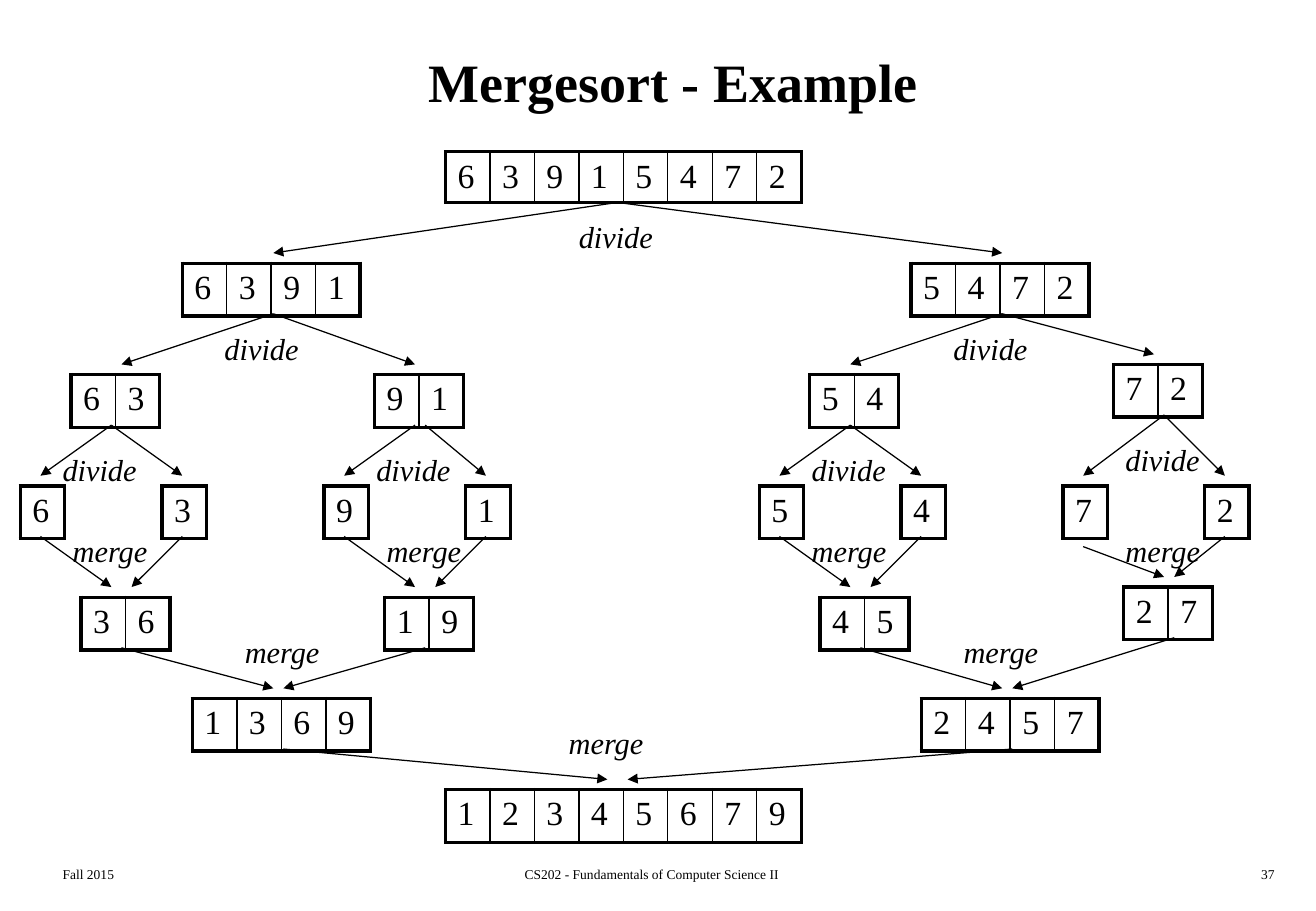
from lxml.etree import SubElement
from pptx import Presentation
from pptx.dml.color import RGBColor
from pptx.enum.shapes import MSO_CONNECTOR
from pptx.enum.text import MSO_ANCHOR, PP_ALIGN
from pptx.oxml.ns import qn
from pptx.util import Cm, Pt

FONT = "Times New Roman"
BLACK = "000000"
CELL_W, CELL_H = Cm(0.93), Cm(1.06)
THICK, THIN = Pt(2.25), Pt(1)


def grid(n):
    """Everything sits on a grid of twelve steps to the inch."""
    return Cm(n * 2.54 / 12)


def color(hex_string):
    return RGBColor.from_string(hex_string)


def write(tf, text, size=20, bold=False, italic=False, align=PP_ALIGN.LEFT):
    p = tf.paragraphs[0]
    p.alignment = align
    r = p.add_run()
    r.text = text
    r.font.name = FONT
    r.font.size = Pt(size)
    r.font.bold = bold
    r.font.italic = italic
    r.font.color.rgb = color(BLACK)


def add_text(slide, text, x, y, w, h, **fmt):
    sp = slide.shapes.add_textbox(grid(x), grid(y), grid(w), grid(h))
    sp.text_frame.word_wrap = True
    write(sp.text_frame, text, **fmt)


def add_label(slide, text, x, y):
    width = {"divide": 12, "merge": 10}[text]
    add_text(slide, text, x, y, width, 4.8, size=18, italic=True)


def add_border(cell, side, width):
    ln = SubElement(cell._tc.get_or_add_tcPr(), qn(f"a:ln{side}"), w=str(width))
    fill = SubElement(ln, qn("a:solidFill"))
    SubElement(fill, qn("a:srgbClr"), val=BLACK)


def add_array(slide, digits, x, y):
    n = len(digits)
    frame = slide.shapes.add_table(1, n, grid(x), grid(y), CELL_W * n, CELL_H)
    table = frame.table
    table.first_row = table.horz_banding = False
    for i, digit in enumerate(digits):
        table.columns[i].width = CELL_W
        cell = table.cell(0, i)
        write(cell.text_frame, digit)
        add_border(cell, "L", THICK if i == 0 else THIN)
        add_border(cell, "R", THICK if i == n - 1 else THIN)
        add_border(cell, "T", THICK)
        add_border(cell, "B", THICK)
        cell.fill.background()


def add_arrow(slide, x1, y1, x2, y2):
    s = slide.shapes.add_connector(MSO_CONNECTOR.STRAIGHT, grid(x1), grid(y1),
                                   grid(x2), grid(y2))
    s.line.color.rgb = color(BLACK)
    s.line.width = Pt(0.75)
    SubElement(s.line._get_or_add_ln(), qn("a:tailEnd"), type="triangle")
    SubElement(s._element.spPr, qn("a:effectLst"))


def merged(digits):
    return "".join(sorted(digits))


# Two digits: split into single cells, then merged
def add_quarter(slide, digits, x, y, lift=0, forks=(11, 11), join=11,
                divide_x=6, merge_x=6):
    top, bottom = y - lift, y + 22 - lift
    add_array(slide, digits, x + 7, top)
    for digit, fork, tip, cell_x in zip(digits, forks, (4, 18), (2, 16)):
        add_arrow(slide, x + fork, top + 5, x + tip, y + 10)
        add_array(slide, digit, x + cell_x, y + 11)
    add_arrow(slide, x + 4, y + 16 + lift, x + join, bottom - 1)
    add_arrow(slide, x + 18, y + 16, x + 13, bottom - 1)
    add_array(slide, merged(digits), x + 8, bottom)
    add_label(slide, "divide", x + divide_x, top + 7)
    add_label(slide, "merge", x + merge_x, y + 15)


# Four digits: shift moves the quarters right and lifts the second one
def add_half(slide, digits, x, y, quarters, shift=0):
    add_array(slide, digits, x + 18, y)
    add_arrow(slide, x + 27, y + 5, x + 12, y + 10)
    add_arrow(slide, x + 27, y + 5, x + 41 + shift, y + 10 - shift)
    add_label(slide, "divide", x + 21, y + 6)
    for i, options in enumerate(quarters):
        add_quarter(slide, digits[2 * i:2 * i + 2], x + 30 * i + shift, y + 11,
                    **options)
    add_arrow(slide, x + 12 + shift, y + 38, x + 27, y + 42)
    add_arrow(slide, x + 42 + 2 * shift, y + 38 - shift, x + 28, y + 42)
    add_label(slide, "merge", x + 23 - shift, y + 36)
    add_array(slide, merged(digits), x + 19, y + 43)


# Whole array, its two halves and the sorted result
def add_tree(slide, digits, x, y):
    add_array(slide, digits, x + 44, y)
    for tip in (27, 99):
        add_arrow(slide, x + 61, y + 5, x + tip, y + 10)
    add_label(slide, "divide", x + 56, y + 6)
    add_half(slide, digits[:4], x, y + 11,
             [dict(divide_x=5), dict(forks=(11, 12), merge_x=7)])
    add_half(slide, digits[4:], x + 72, y + 11,
             [{}, dict(lift=1, forks=(12, 12), join=12, divide_x=7, merge_x=7)],
             shift=1)
    for start, tip in ((28, 60), (100, 62)):
        add_arrow(slide, x + start, y + 59, x + tip, y + 62)
    add_label(slide, "merge", x + 55, y + 56)
    add_array(slide, merged(digits), x + 44, y + 63)


def add_title(slide, text, x, y, w, h):
    sp = slide.shapes.title
    sp.left, sp.top, sp.width, sp.height = map(grid, (x, y, w, h))
    sp.text_frame.vertical_anchor = MSO_ANCHOR.MIDDLE
    write(sp.text_frame, text, size=32, bold=True, align=PP_ALIGN.CENTER)


def add_footer(slide, x, y, h):
    add_text(slide, "Fall 2015", x, y, 27, h, size=8)
    add_text(slide, "CS202 - Fundamentals of Computer Science II",
             x + 35, y, 48.8, h, size=8, align=PP_ALIGN.CENTER)
    add_text(slide, "37", x + 95, y, 27.1, h, size=8, align=PP_ALIGN.RIGHT)


def main():
    prs = Presentation()
    prs.slide_width, prs.slide_height = grid(130), grid(90)
    slide = prs.slides.add_slide(prs.slide_layouts[5])
    add_title(slide, "Mergesort - Example", 5, 2, 123, 12)
    add_tree(slide, "63915472", 0, 15)
    add_footer(slide, 5, 85, 3)
    prs.save("out.pptx")


if __name__ == "__main__":
    main()
